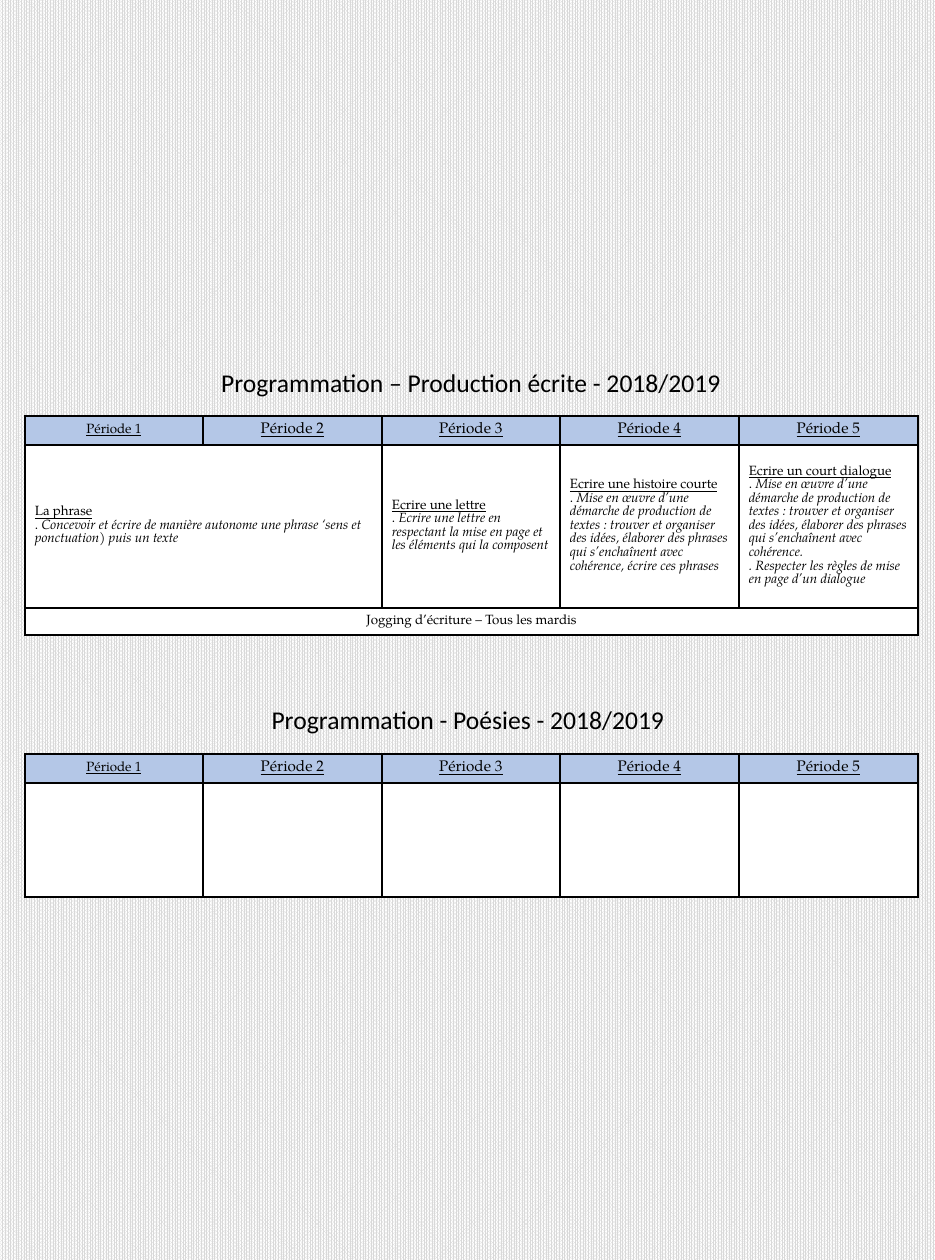
from lxml import etree
from pptx import Presentation
from pptx.dml.color import RGBColor
from pptx.enum.dml import MSO_PATTERN
from pptx.enum.text import MSO_ANCHOR, PP_ALIGN
from pptx.oxml.ns import qn
from pptx.util import Pt

PX = 6656
CENTER, LEFT = PP_ALIGN.CENTER, PP_ALIGN.LEFT
TOP, MIDDLE = MSO_ANCHOR.TOP, MSO_ANCHOR.MIDDLE
DOTS = MSO_PATTERN.PERCENT_90

COLORS = {"ink": "000000", "paper": "FFFFFF", "grain": "D9D9D9", "header": "B4C7E7"}
HEADING_FONT, TABLE_FONT = "Calibri", "TeX Gyre Pagella"
BORDER = Pt(1)

PERIODS = [f"Période {n}" for n in range(1, 6)]
# Column of the cell -> its heading followed by its goals
WRITING_GOALS = {
    0: ["La phrase",
        "Concevoir et écrire de manière autonome une phrase ‘sens et ponctuation) "
        "puis un texte"],
    2: ["Ecrire une lettre",
        "Ecrire une lettre en respectant la mise en page et les éléments qui la composent"],
    3: ["Ecrire une histoire courte",
        "Mise en œuvre d’une démarche de production de textes : trouver et organiser "
        "des idées, élaborer des phrases qui s’enchaînent avec cohérence, écrire ces phrases"],
    4: ["Ecrire un court dialogue",
        "Mise en œuvre d’une démarche de production de textes : trouver et organiser "
        "des idées, élaborer des phrases qui s’enchaînent avec cohérence.",
        "Respecter les règles de mise en page d’un dialogue"],
}


def rgb(name):
    return RGBColor.from_string(COLORS[name])


def style_paragraph(p, font, size, align):
    p.alignment = align
    p.font.name = font
    p.font.size = Pt(size)
    p.font.color.rgb = rgb("ink")


def add_heading(shape, text, x, y, w, h):
    shape.left, shape.top, shape.width, shape.height = (v * PX for v in (x, y, w, h))
    tf = shape.text_frame
    tf.word_wrap = True
    tf.vertical_anchor = TOP
    tf.margin_top = tf.margin_bottom = 5 * PX
    p = tf.paragraphs[0]
    p.text = text
    style_paragraph(p, HEADING_FONT, 13.4, CENTER)


def add_borders(cell):
    tc_pr = cell._tc.get_or_add_tcPr()
    for side in ("a:lnL", "a:lnR", "a:lnT", "a:lnB"):
        ln = etree.SubElement(tc_pr, qn(side), w=str(BORDER))
        fill = etree.SubElement(ln, qn("a:solidFill"))
        etree.SubElement(fill, qn("a:srgbClr"), val=COLORS["ink"])


def write_line(cell, text, size, underline=False):
    p = cell.text_frame.paragraphs[0]
    p.text = text
    style_paragraph(p, TABLE_FONT, size, CENTER)
    p.font.underline = underline


def write_goals(cell, heading, *goals):
    """Underlined heading, then one italic paragraph per goal; the first dot is upright."""
    tf = cell.text_frame
    p = tf.paragraphs[0]
    p.text = heading
    style_paragraph(p, TABLE_FONT, 7, LEFT)
    p.font.underline = True
    for i, goal in enumerate(goals):
        p = tf.add_paragraph()
        style_paragraph(p, TABLE_FONT, 7, LEFT)
        for text, italic in ((". ", i > 0), (goal, True)):
            r = p.add_run()
            r.text = text
            r.font.italic = italic


def add_period_table(s, x, y, w, row_heights):
    """Bordered grid with one column per period under a blue header row."""
    n = len(PERIODS)
    frame = s.shapes.add_table(len(row_heights), n, x * PX, y * PX,
                               w * PX, sum(row_heights) * PX)
    table = frame.table
    table.first_row = table.horz_banding = False
    for i, column in enumerate(table.columns):
        column.width = (w * (i + 1) // n - w * i // n) * PX
    for row_index, (row, height) in enumerate(zip(table.rows, row_heights)):
        row.height = height * PX
        for cell in row.cells:
            add_borders(cell)
            cell.fill.solid()
            cell.fill.fore_color.rgb = rgb("paper" if row_index else "header")
            cell.vertical_anchor = MIDDLE
            cell.margin_left = cell.margin_right = 10 * PX
            cell.margin_top = cell.margin_bottom = 5 * PX
    for i, period in enumerate(PERIODS):
        write_line(table.cell(0, i), period, 8 if i else 7, underline=True)
    return table


def add_writing_programme(s, x, y, w):
    add_heading(s.shapes.title, "Programmation – Production écrite - 2018/2019",
                x + 23, y, w - 47, 45)
    table = add_period_table(s, x, y + 54, w, [29, 163, 27])
    table.cell(1, 0).merge(table.cell(1, 1))
    table.cell(2, 0).merge(table.cell(2, 4))
    for column, lines in WRITING_GOALS.items():
        write_goals(table.cell(1, column), *lines)
    write_line(table.cell(2, 0), "Jogging d’écriture – Tous les mardis", 7)


def add_poetry_programme(s, x, y, w):
    add_heading(s.shapes.add_textbox(0, 0, 0, 0), "Programmation - Poésies - 2018/2019",
                x + 20, y, w - 47, 45)
    add_period_table(s, x, y + 55, w, [29, 114])


def main():
    prs = Presentation()
    prs.slide_width, prs.slide_height = 935 * PX, 1260 * PX
    s = prs.slides.add_slide(prs.slide_layouts[5])
    fill = s.background.fill
    fill.patterned()
    fill.pattern = DOTS
    fill.fore_color.rgb = rgb("grain")
    fill.back_color.rgb = rgb("paper")
    add_writing_programme(s, 25, 362, 893)
    add_poetry_programme(s, 25, 699, 893)
    prs.save("out.pptx")


if __name__ == "__main__":
    main()
